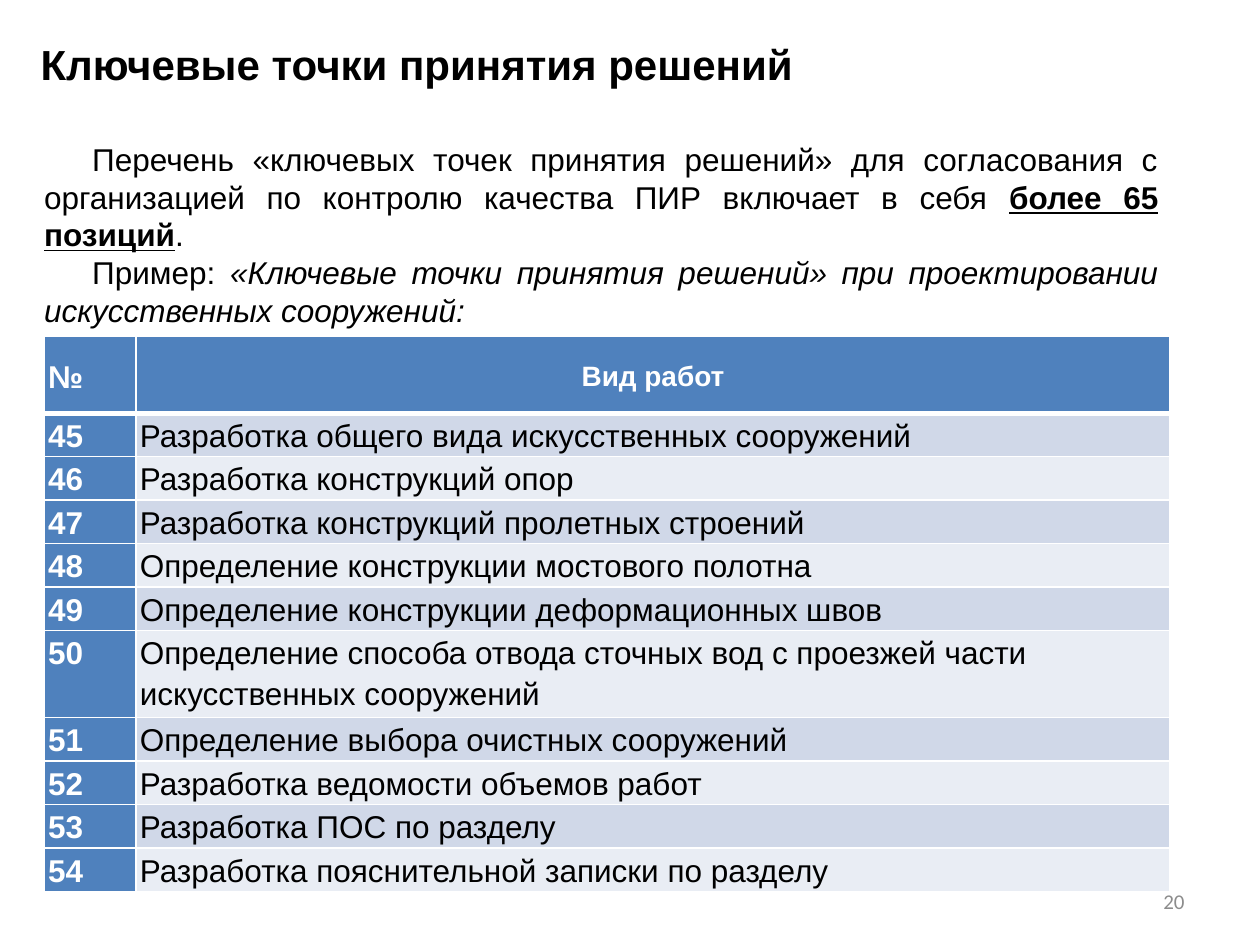
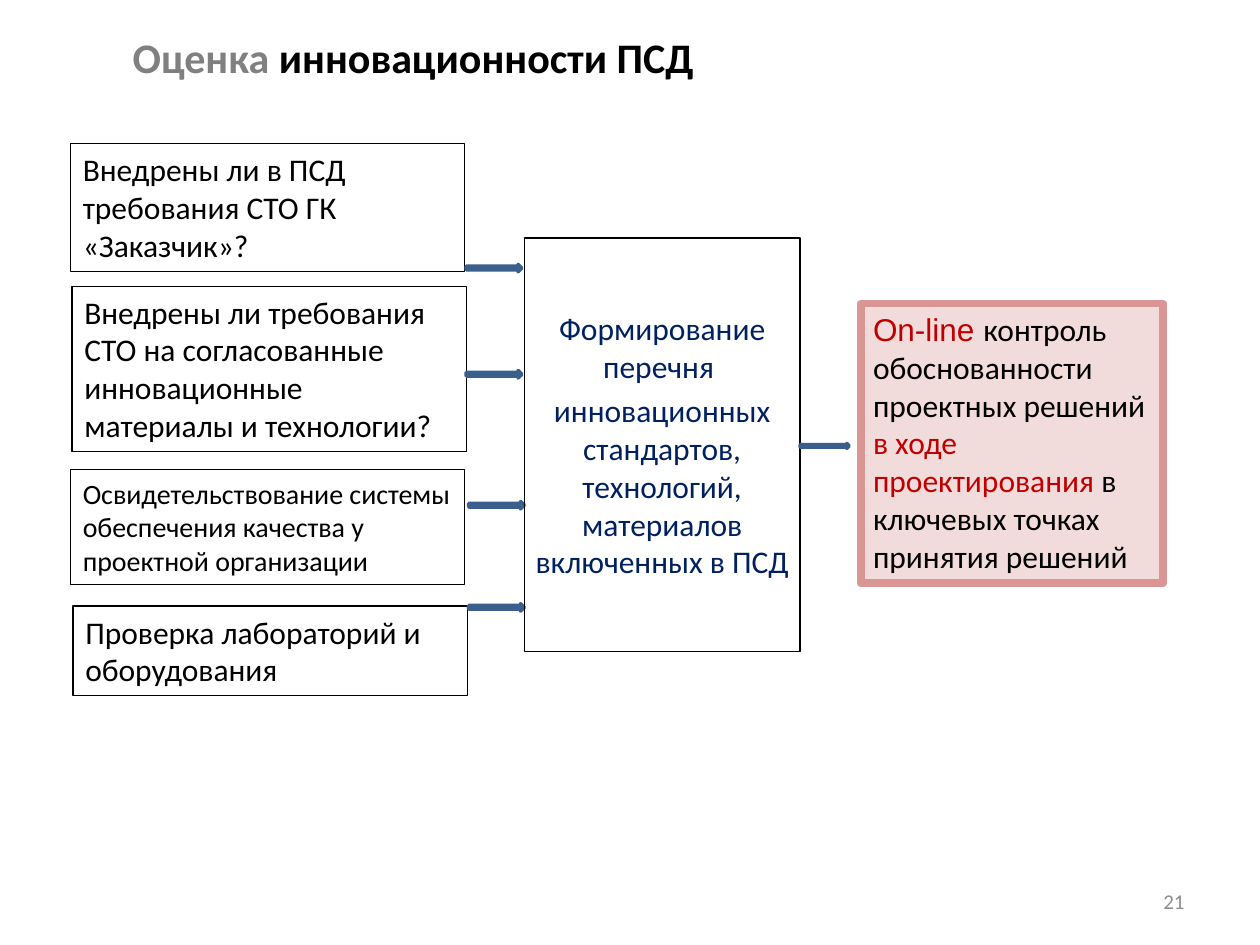
from lxml import etree
from pptx import Presentation
from pptx import util as u
from pptx.dml.color import RGBColor
from pptx.enum import shapes, text
from pptx.oxml import ns

BLACK, WHITE, GREY = "000000", "FFFFFF", "808080"
BLUE, BLUE_EDGE, NAVY, RED = "4F81BD", "3A5F8C", "002060", "C00000"
PINK, PINK_EDGE, NUMBER_GREY = "F2DCDB", "D99694", "8C8C8C"
BANDS = ("D0D8E8", "E9EDF4")
LEFT, CENTER, RIGHT, JUSTIFY = (
    text.PP_ALIGN.LEFT, text.PP_ALIGN.CENTER, text.PP_ALIGN.RIGHT, text.PP_ALIGN.JUSTIFY)
TOP, MIDDLE = text.MSO_ANCHOR.TOP, text.MSO_ANCHOR.MIDDLE
WIDE_INSETS, TITLE_INSETS, CELL_INSETS = (0.25, 0.13), (0.18, 0.1), (0.08, 0)

WORKS = [
    "Разработка общего вида искусственных сооружений",
    "Разработка конструкций опор",
    "Разработка конструкций пролетных строений",
    "Определение конструкции мостового полотна",
    "Определение конструкции деформационных швов",
    "Определение способа отвода сточных вод с проезжей части искусственных сооружений",
    "Определение выбора очистных сооружений",
    "Разработка ведомости объемов работ",
    "Разработка ПОС по разделу",
    "Разработка пояснительной записки по разделу",
]
FIRST_WORK, LONG_WORK = 45, 50

# text, size, box left, top and height, arrow left and top
QUESTIONS = [
    ("Внедрены ли в ПСД требования СТО ГК «Заказчик»?", 18, 0, 0, 2.57, 7.98, 2.43),
    ("Внедрены ли требования СТО на согласованные инновационные материалы и технологии?",
     18, 0.03, 2.87, 3.33, 7.98, 4.57),
    ("Освидетельствование системы обеспечения качества у проектной организации",
     16, 0, 6.57, 2.31, 8.03, 7.21),
    ("Проверка лабораторий и оборудования", 18, 0.05, 9.32, 1.8, 8.03, 9.27),
]


def rgb(value):
    return RGBColor.from_string(value)


def apply(target, formats):
    for name, value in formats.items():
        setattr(target, name, value)


def write(frame, paragraphs, size=18, font="Calibri", color=BLACK, align=LEFT, anchor=TOP,
          insets=WIDE_INSETS, indent=0, **spacing):
    """Fill a frame; each paragraph is a list of (text, font overrides)."""
    side, edge = (u.Cm(inset) for inset in insets)
    apply(frame, dict(word_wrap=True, vertical_anchor=anchor, margin_left=side,
                      margin_right=side, margin_top=edge, margin_bottom=edge))
    for index, runs in enumerate(paragraphs):
        paragraph = frame.add_paragraph() if index else frame.paragraphs[0]
        if indent:
            paragraph._p.get_or_add_pPr().set("indent", str(u.Cm(indent)))
        formats = dict(spacing, alignment=align)
        if not index:
            formats.pop("space_before", None)
        apply(paragraph, formats)
        for words, overrides in runs:
            run = paragraph.add_run()
            run.text = words
            look = dict(size=u.Pt(size), name=font, bold=False) | overrides
            run.font.color.rgb = rgb(look.pop("color", color))
            apply(run.font, look)


def add_text(slide, box, paragraphs, **look):
    label = slide.shapes.add_textbox(*map(u.Cm, box))
    write(label.text_frame, paragraphs, **look)


def add_block(slide, kind, box, fill, edge, width):
    block = slide.shapes.add_shape(kind, *map(u.Cm, box))
    block.shadow.inherit = False
    if fill:
        block.fill.solid()
        block.fill.fore_color.rgb = rgb(fill)
    else:
        block.fill.background()
    block.line.color.rgb = rgb(edge)
    block.line.width = u.Pt(width)
    return block


def add_card(slide, box, paragraphs, fill=None, edge=BLACK, width=0.75, **look):
    card = add_block(slide, shapes.MSO_SHAPE.RECTANGLE, box, fill, edge, width)
    write(card.text_frame, paragraphs, **look)


def add_arrow(slide, *box):
    add_block(slide, shapes.MSO_SHAPE.RIGHT_ARROW, box, BLUE, BLUE_EDGE, 2)


def add_title(slide, box, runs, **look):
    bold_runs = [(words, dict(bold=True) | overrides) for words, overrides in runs]
    add_text(slide, box, [bold_runs], size=24, anchor=MIDDLE, insets=TITLE_INSETS, **look)


def add_slide(deck, number):
    slide = deck.slides.add_slide(deck.slide_layouts[6])
    add_text(slide, (18.21, 17.65, 5.92, 1.02), [[(str(number), {})]],
             size=12, color=NUMBER_GREY, align=RIGHT, anchor=MIDDLE)
    return slide


def border_cell(cell, bottom):
    properties = cell._tc.get_or_add_tcPr()
    for side, width in dict(lnL=1, lnR=1, lnT=1, lnB=bottom).items():
        line = etree.SubElement(properties, ns.qn(f"a:{side}"), w=str(u.Pt(width)))
        solid = etree.SubElement(line, ns.qn("a:solidFill"))
        etree.SubElement(solid, ns.qn("a:srgbClr"), val=WHITE)


def fill_cell(cell, words, fill, anchor=TOP, bottom=1, bold=True, **look):
    border_cell(cell, bottom)
    cell.fill.solid()
    cell.fill.fore_color.rgb = rgb(fill)
    side, edge = map(u.Cm, CELL_INSETS)
    write(cell.text_frame, [[(words, dict(bold=bold))]], font="Arial",
          line_spacing=1.15, **look)
    apply(cell, dict(vertical_anchor=anchor, margin_left=side, margin_right=side,
                     margin_top=edge, margin_bottom=edge))


def add_works_table(slide, left, top, number_width, work_width):
    heights = [1.55] + [1.65 if FIRST_WORK + i == LONG_WORK else 0.79
                        for i in range(len(WORKS))]
    box = (left, top, number_width + work_width, sum(heights))
    works = slide.shapes.add_table(len(heights), 2, *map(u.Cm, box)).table
    for column, width in zip(works.columns, (number_width, work_width)):
        column.width = u.Cm(width)
    for row, height in zip(works.rows, heights):
        row.height = u.Cm(height)
    header = dict(fill=BLUE, color=WHITE, anchor=MIDDLE, bottom=3)
    fill_cell(works.cell(0, 0), "№", **header)
    fill_cell(works.cell(0, 1), "Вид работ", size=16, align=CENTER, **header)
    for i, work in enumerate(WORKS):
        fill_cell(works.cell(i + 1, 0), str(FIRST_WORK + i), BLUE, color=WHITE)
        fill_cell(works.cell(i + 1, 1), work, BANDS[i % 2], bold=False)


def add_questions(slide, left, top):
    for words, size, x, y, height, arrow_x, arrow_y in QUESTIONS:
        add_card(slide, (left + x, top + y, 7.95, height), [[(words, {})]], size=size)
        add_arrow(slide, left + arrow_x, top + arrow_y, 1.12, 0.15)


def add_outcome(slide, left, top):
    """List of innovations, leading to the on-line control."""
    add_card(slide, (left, top, 5.56, 8.33),
             [[("Формирование перечня ", {})],
              [("инновационных стандартов, технологий, материалов включенных в ПСД", {})]],
             color=NAVY, align=CENTER, anchor=MIDDLE, insets=TITLE_INSETS,
             space_before=u.Pt(3.6))
    add_arrow(slide, left + 5.56, top + 4.14, 0.99, 0.1)
    add_card(slide, (left + 6.78, top + 1.32, 6.1, 5.64),
             [[("Оn-line ", dict(name="Arial", color=RED)),
               ("контроль обоснованности проектных решений ", {}),
               ("в ходе проектирования ", dict(color=RED)),
               ("в ключевых точках принятия решений", {})]],
             fill=PINK, edge=PINK_EDGE, width=4.5)


def decision_points_slide(deck):
    slide = add_slide(deck, 20)
    add_title(slide, (0.64, 0.76, 15.6, 1.04),
              [("Ключевые точки принятия решений", {})], font="Arial")
    add_text(slide, (0.64, 2.69, 22.96, 4.11),
             [[("Перечень «ключевых точек принятия решений» для согласования с организацией "
                "по контролю качества ПИР включает в себя ", {}),
               ("более 65 позиций", dict(bold=True, underline=True)),
               (".", {})],
              [("Пример: ", {}),
               ("«Ключевые точки принятия решений» при проектировании "
                "искусственных сооружений:", dict(italic=True))]],
             font="Arial", align=JUSTIFY, indent=0.97)
    add_works_table(slide, 0.89, 6.78, 1.85, 20.85)


def innovation_slide(deck):
    slide = add_slide(deck, 21)
    add_title(slide, (0.53, 0.36, 15.6, 1.78),
              [("Оценка ", dict(color=GREY)), ("инновационности ПСД", {})],
              align=CENTER, line_spacing=u.Pt(22.5))
    add_questions(slide, 1.42, 2.9)
    add_outcome(slide, 10.57, 4.8)


def main():
    deck = Presentation()
    apply(deck, dict(slide_width=u.Cm(25.4), slide_height=u.Cm(19.05)))
    decision_points_slide(deck)
    innovation_slide(deck)
    deck.save("out.pptx")


if __name__ == "__main__":
    main()
